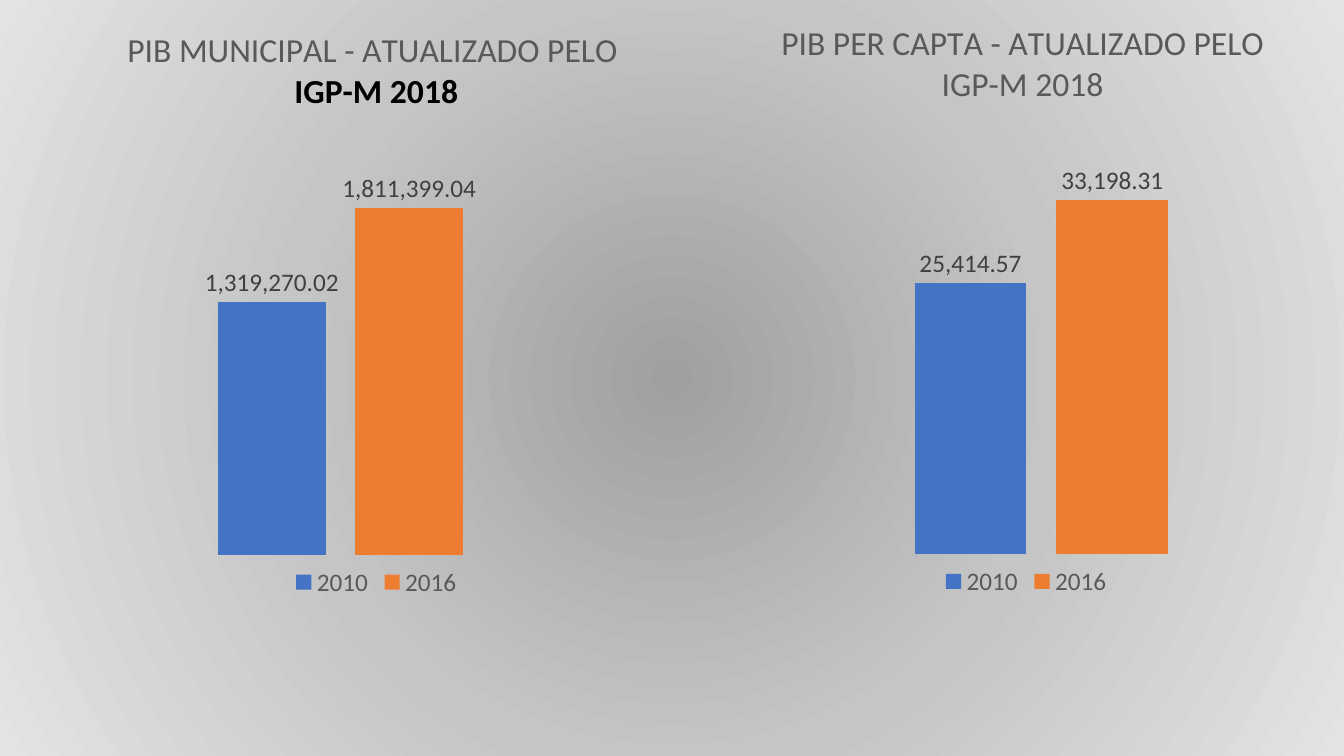
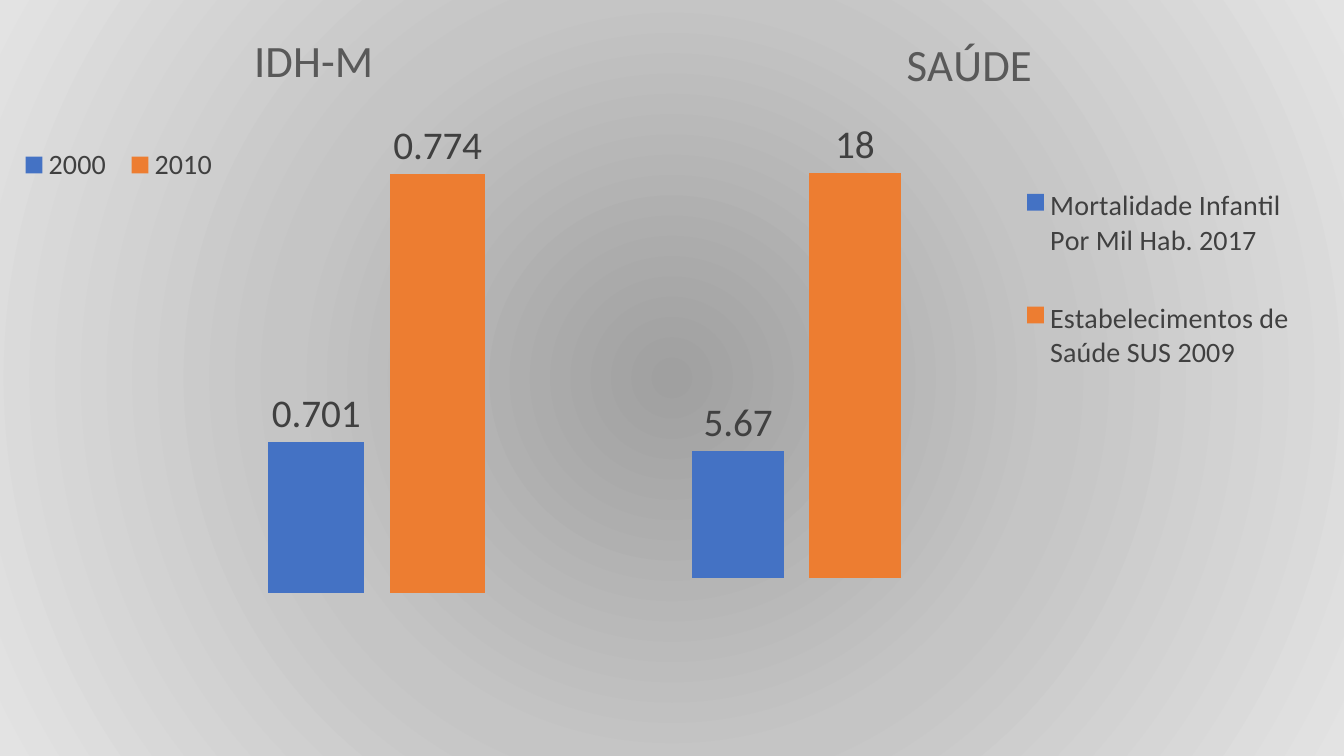
from dataclasses import dataclass

from pptx import Presentation
from pptx import util as u
from pptx.chart.data import CategoryChartData
from pptx.dml.color import RGBColor
from pptx.enum import chart as charts, shapes
from pptx.oxml import parse_xml
from pptx.oxml.ns import nsdecls, qn


@dataclass(frozen=True)
class Theme:
    font: str = "Calibri"
    heading: str = "595959"
    emphasis: str = "000000"
    label: str = "404040"
    series: tuple = ("4472C4", "ED7D31")
    backdrop: tuple = ((0, "A0A0A0"), (50, "C5C5C5"), (100, "E3E3E3"))


@dataclass(frozen=True)
class ChartStyle:
    title_size: int
    label_size: int
    legend_size: int
    legend_color: str
    number_format: str


THEME = Theme()
ECONOMY = ChartStyle(24, 18, 18, THEME.heading, "#,##0.00")
WELFARE = ChartStyle(32, 28, 20, THEME.label, "General")
WIDTH, HEIGHT = u.Inches(13.33), u.Inches(7.5)


def format_font(font, size, color, bold=False):
    font.name, font.size, font.bold = THEME.font, u.Pt(size), bold
    font.color.rgb = RGBColor.from_string(color)


def add_backdrop(slide):
    """Cover the slide with a gradient that is darkest in the middle."""
    shape = slide.shapes.add_shape(shapes.MSO_SHAPE.RECTANGLE, 0, 0, WIDTH, HEIGHT)
    shape.shadow.inherit = False
    shape.line.fill.background()
    shape.fill.solid()
    stops = "".join(
        f'<a:gs pos="{percent * 1000}"><a:srgbClr val="{color}"/></a:gs>'
        for percent, color in THEME.backdrop
    )
    gradient = parse_xml(
        f'<a:gradFill {nsdecls("a")} rotWithShape="1"><a:gsLst>{stops}</a:gsLst>'
        '<a:path path="circle">'
        '<a:fillToRect l="50000" t="50000" r="50000" b="50000"/>'
        "</a:path></a:gradFill>"
    )
    properties = shape.element.spPr
    properties.replace(properties.find(qn("a:solidFill")), gradient)


def place_part(part, index, box, inner=False):
    """Pin a chart part to x, y and optionally width, height, in percent of the chart."""
    for layout in part.findall(qn("c:layout")):
        part.remove(layout)
    target = '<c:layoutTarget val="inner"/>' if inner else ""
    modes = '<c:xMode val="edge"/><c:yMode val="edge"/>'
    sizes = "".join(
        f'<c:{name} val="{percent / 100:.3f}"/>' for name, percent in zip("xywh", box)
    )
    part.insert(index, parse_xml(
        f'<c:layout {nsdecls("c")}><c:manualLayout>{target}{modes}{sizes}'
        "</c:manualLayout></c:layout>"
    ))


def write_title(chart, lines, style, position):
    """Write the title; any line after the first is emphasised."""
    frame = chart.chart_title.text_frame
    for index, line in enumerate(lines):
        paragraph = frame.add_paragraph() if index else frame.paragraphs[0]
        paragraph.text = line
        color = THEME.emphasis if index else THEME.heading
        format_font(paragraph.font, style.title_size, color, bold=index > 0)
    if position:
        place_part(chart.chart_title._element, 1, position)


def add_legend(chart, style, box):
    chart.has_legend = True
    legend = chart.legend
    legend.position = charts.XL_LEGEND_POSITION.BOTTOM
    legend.include_in_layout = False
    format_font(legend.font, style.legend_size, style.legend_color)
    if box:
        place_part(legend._element, 1, box)


def add_column_chart(slide, area, title, values, scale, plot_box, style,
                     title_position=None, legend_box=None):
    """Add a chart with one column per series; area is in percent of the slide."""
    data = CategoryChartData(number_format=style.number_format)
    data.categories = ["1"]
    for name, value in values.items():
        data.add_series(name, [value])
    frame = [
        int(percent * side / 100)
        for percent, side in zip(area, (WIDTH, HEIGHT, WIDTH, HEIGHT))
    ]
    chart = slide.shapes.add_chart(
        charts.XL_CHART_TYPE.COLUMN_CLUSTERED, *frame, data
    ).chart
    format_font(chart.font, 10, THEME.emphasis)

    axis = chart.value_axis
    axis.minimum_scale, axis.maximum_scale = scale
    axis.has_major_gridlines = False
    axis.visible = chart.category_axis.visible = False

    plot = chart.plots[0]
    plot.gap_width, plot.overlap = 219, -27
    plot.vary_by_categories = False
    for series, color in zip(plot.series, THEME.series):
        series.format.fill.solid()
        series.format.fill.fore_color.rgb = RGBColor.from_string(color)
    plot.has_data_labels = True
    labels = plot.data_labels
    labels.show_value = True
    labels.position = charts.XL_LABEL_POSITION.OUTSIDE_END
    labels.number_format = style.number_format
    labels.number_format_is_linked = False
    format_font(labels.font, style.label_size, THEME.label)

    place_part(chart._chartSpace.chart.plotArea, 0, plot_box, inner=True)
    write_title(chart, title, style, title_position)
    add_legend(chart, style, legend_box)


def add_slide(presentation):
    slide = presentation.slides.add_slide(presentation.slide_layouts[6])
    add_backdrop(slide)
    return slide


def add_economy_slide(presentation):
    slide = add_slide(presentation)
    add_column_chart(
        slide, (0, 1.2, 56, 78.5),
        ["PIB MUNICIPAL - ATUALIZADO PELO ", "IGP-M 2018"],
        {"2010": 1319270.02, "2016": 1811399.04}, (0, 2000000),
        (13.2, 27.4, 64.1, 64.6), ECONOMY,
    )
    add_column_chart(
        slide, (52.6, 0.4, 47.5, 79.2),
        ["PIB PER CAPTA - ATUALIZADO PELO IGP-M 2018"],
        {"2010": 25414.57, "2016": 33198.31}, (0, 35000),
        (13.4, 29.7, 78, 62.4), ECONOMY, title_position=(10.7, 1.9),
    )


def add_welfare_slide(presentation):
    slide = add_slide(presentation)
    add_column_chart(
        slide, (0, 0, 44, 95.3), ["IDH-M"],
        {"2000": 0.701, "2010": 0.774}, (0.66, 0.78),
        (27.7, 21.1, 72.1, 61.2), WELFARE,
        title_position=(41.6, 2.9), legend_box=(1.6, 18.9, 37, 8),
    )
    add_column_chart(
        slide, (44, 0, 56, 91.2), ["SAÚDE"],
        {"Mortalidade Infantil Por Mil Hab. 2017": 5.67,
         "Estabelecimentos de Saúde SUS 2009": 18}, (0, 20),
        (0, 18.5, 54.5, 65.4), WELFARE,
        title_position=(40.8, 3.6), legend_box=(56.8, 21, 37, 39),
    )


def main():
    presentation = Presentation()
    presentation.slide_width, presentation.slide_height = WIDTH, HEIGHT
    add_economy_slide(presentation)
    add_welfare_slide(presentation)
    presentation.save("out.pptx")


if __name__ == "__main__":
    main()
